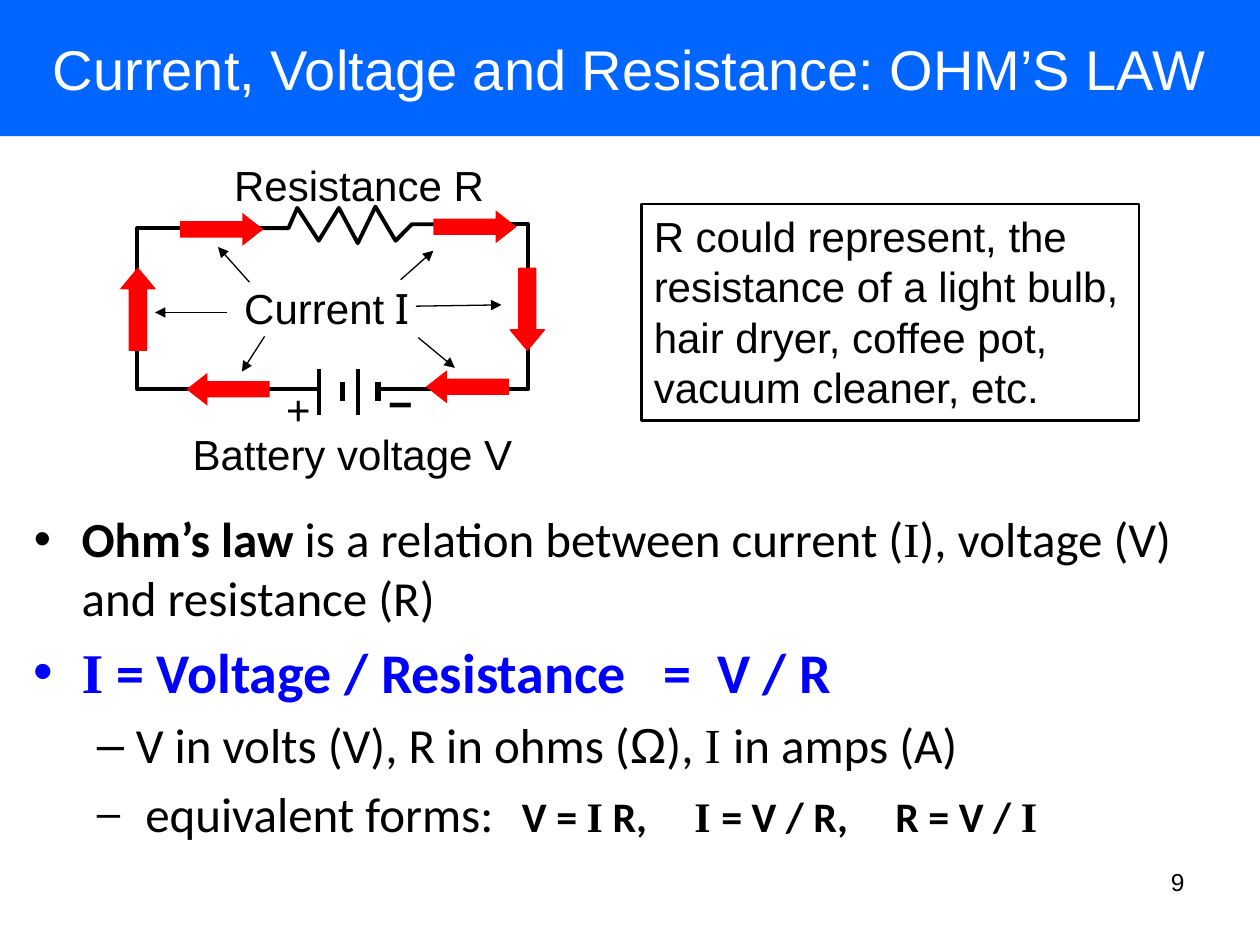
"""Build the Ohm's law slide with a circuit diagram and its formulas."""
from lxml.etree import SubElement
from pptx import Presentation
from pptx.dml.color import RGBColor
from pptx.enum.shapes import MSO_CONNECTOR, MSO_SHAPE
from pptx.enum.text import MSO_ANCHOR, PP_ALIGN
from pptx.oxml.ns import qn
from pptx.util import Inches, Pt

COLORS = {"banner": "0066FF", "white": "FFFFFF", "black": "000000",
          "formula": "0000FF", "current": "FF0000"}
SANS, BODY, SERIF, SLAB = "Arial", "Calibri", "Times New Roman", "Roboto Slab"

TITLE = "Current, Voltage and Resistance: OHM’S LAW"
EXAMPLES = ["R could represent, the resistance of a light bulb,",
            "hair dryer, coffee pot, vacuum cleaner, etc."]
BULLETS = [
    (0, "black", [("Ohm’s law", 28, BODY, True),
                  (" is a relation between current (", 28, BODY, False),
                  ("I", 28, SERIF, False),
                  ("), voltage (V) and resistance (R)", 28, BODY, False)]),
    (0, "formula", [("I", 32, SERIF, True),
                    (" = Voltage / Resistance   =  V / R", 32, BODY, True)]),
    (1, "black", [("V in volts (V), R in ohms (", 28, BODY, False),
                  ("Ω", 28, SANS, False), ("), ", 28, BODY, False),
                  ("I ", 28, SERIF, False), ("in amps (A)", 28, BODY, False)]),
    (1, "black", [(" ", 24, BODY, False), ("equivalent forms:", 28, BODY, False),
                  ("   ", 24, BODY, False), ("V = ", 24, BODY, True),
                  ("I", 24, SERIF, True), (" R,     ", 24, BODY, True),
                  ("I ", 24, SERIF, True), ("= V / R,     R = V / ", 24, BODY, True),
                  ("I", 24, SERIF, True)]),
]
BULLET_LEVELS = [("•", 0.38, -0.38), ("–", 0.81, -0.31)]

CIRCUIT_LABELS = [
    ((1.76, 1.22, 2.19, 0.5), [("Resistance R", 24, SANS, False)]),
    ((1.43, 3.35, 2.74, 0.5), [("Battery voltage V", 24, SANS, False)]),
    ((1.84, 2.19, 1.53, 0.5), [("Current", 24, SANS, False), (" I", 24, SLAB, False)]),
]
POLE_SIGNS = [((2.27, 3.04, 0.18, 0.4), [("+", 24, SANS, False)]),
              ((3.08, 3.0, 0.18, 0.4), [("−", 24, SANS, True)])]

RESISTOR = [(2.01, 1.81), (2.29, 1.81), (2.36, 1.65), (2.53, 1.91), (2.69, 1.65),
            (2.84, 1.93), (2.98, 1.64), (3.14, 1.91), (3.27, 1.78), (3.55, 1.78)]
LEFT_WIRE = [(2.06, 1.81), (1.09, 1.81), (1.09, 3.09), (2.54, 3.09)]
RIGHT_WIRE = [(3.49, 1.78), (4.19, 1.78), (4.19, 3.09), (3.0, 3.09)]
LONG_PLATE, SHORT_PLATE = (2.93, 3.29, 2.25), (3.03, 3.18, 3)
BATTERY = [(2.53, LONG_PLATE), (2.72, SHORT_PLATE), (2.84, LONG_PLATE), (3.0, SHORT_PLATE)]

UP, LEFT = MSO_SHAPE.UP_ARROW, MSO_SHAPE.LEFT_ARROW
ARROW_STYLES = {UP: (0.27, 0.65, 0.6), LEFT: (0.66, 0.26, 0.64)}
CURRENT_ARROWS = [(UP, 0.96, 2.13, 0), (UP, 4.05, 2.13, 180),
                  (LEFT, 1.48, 2.96, 0), (LEFT, 3.38, 2.94, 0),
                  (LEFT, 1.43, 1.69, 180), (LEFT, 3.44, 1.67, 180)]
POINTERS = [((1.98, 2.24), (1.73, 1.96)), ((3.18, 2.22), (3.44, 1.99)),
            ((1.8, 2.48), (1.23, 2.48)), ((3.3, 2.43), (3.98, 2.42)),
            ((2.1, 2.67), (1.92, 2.95)), ((3.32, 2.68), (3.61, 2.92))]


def color(name):
    return RGBColor.from_string(COLORS[name])


def fill_shape(shape, name):
    shape.fill.solid()
    shape.fill.fore_color.rgb = color(name)


def set_line(shape, name, width):
    shape.line.color.rgb = color(name)
    shape.line.width = Pt(width)


def add_runs(paragraph, runs, color_name="black"):
    for text, size, font, bold in runs:
        run = paragraph.add_run()
        run.text = text
        run.font.size, run.font.name, run.font.bold = Pt(size), font, bold
        run.font.color.rgb = color(color_name)


def add_text(shapes, box, runs, wrap=True, margin=None):
    shape = shapes.add_textbox(*map(Inches, box))
    frame = shape.text_frame
    frame.word_wrap = wrap
    if margin is not None:
        frame.margin_left = frame.margin_right = Inches(margin)
        frame.margin_top = frame.margin_bottom = Inches(margin)
    add_runs(frame.paragraphs[0], runs)
    return frame


def add_wire(shapes, points):
    start, *corners = [(Inches(x), Inches(y)) for x, y in points]
    builder = shapes.build_freeform(*start)
    builder.add_line_segments(corners, close=False)
    wire = builder.convert_to_shape()
    wire.shadow.inherit = False
    wire.fill.background()
    set_line(wire, "black", 2.25)


def add_line(shapes, start, end, width, arrow=False):
    line = shapes.add_connector(MSO_CONNECTOR.STRAIGHT, *map(Inches, start + end))
    set_line(line, "black", width)
    properties = line._element.spPr
    if arrow:
        SubElement(properties.find(qn("a:ln")), qn("a:tailEnd"), type="triangle")
    SubElement(properties, qn("a:effectLst"))


def add_current_arrow(shapes, kind, left, top, rotation):
    width, height, head = ARROW_STYLES[kind]
    arrow = shapes.add_shape(kind, *map(Inches, (left, top, width, height)))
    arrow.adjustments[0], arrow.adjustments[1] = 0.5, head
    arrow.rotation = rotation
    arrow.shadow.inherit = False
    fill_shape(arrow, "current")
    if kind == UP:
        set_line(arrow, "current", 0.75)
    else:
        arrow.line.fill.background()


def add_circuit(slide):
    shapes = slide.shapes.add_group_shape().shapes
    for points in (RESISTOR, LEFT_WIRE, RIGHT_WIRE):
        add_wire(shapes, points)
    for x, (top, bottom, width) in BATTERY:
        add_line(shapes, (x, top), (x, bottom), width)
    for box, runs in CIRCUIT_LABELS:
        add_text(shapes, box, runs, wrap=False)
    for arrow in CURRENT_ARROWS:
        add_current_arrow(shapes, *arrow)
    for start, end in POINTERS:
        add_line(shapes, start, end, 0.75, arrow=True)
    for box, runs in POLE_SIGNS:
        add_text(shapes, box, runs, margin=0)


def add_title(slide):
    title = slide.shapes.title
    title.left, title.top, title.width, title.height = map(Inches, (0, 0, 10, 1.08))
    fill_shape(title, "banner")
    title.text_frame.vertical_anchor = MSO_ANCHOR.MIDDLE
    paragraph = title.text_frame.paragraphs[0]
    paragraph.alignment = PP_ALIGN.CENTER
    add_runs(paragraph, [(TITLE, 32, SANS, False)], "white")


def add_examples(slide):
    box = slide.shapes.add_textbox(*map(Inches, (5.09, 1.62, 3.95, 1.72)))
    set_line(box, "black", 1.5)
    frame = box.text_frame
    frame.word_wrap = True
    for index, text in enumerate(EXAMPLES):
        paragraph = frame.add_paragraph() if index else frame.paragraphs[0]
        add_runs(paragraph, [(text, 24, SANS, False)])


def add_bullets(slide):
    box = slide.shapes.add_textbox(*map(Inches, (0.17, 3.99, 9.33, 3.36)))
    frame = box.text_frame
    frame.word_wrap = True
    for index, (level, color_name, runs) in enumerate(BULLETS):
        paragraph = frame.add_paragraph() if index else frame.paragraphs[0]
        paragraph.level = level
        character, margin, indent = BULLET_LEVELS[level]
        properties = paragraph._p.get_or_add_pPr()
        properties.set("marL", str(Inches(margin)))
        properties.set("indent", str(Inches(indent)))
        spacing = SubElement(properties, qn("a:spcBef"))
        SubElement(spacing, qn("a:spcPct"), val="20000")
        SubElement(properties, qn("a:buFont"), typeface=SANS)
        SubElement(properties, qn("a:buChar"), char=character)
        add_runs(paragraph, runs, color_name)


def main():
    presentation = Presentation()
    presentation.slide_width, presentation.slide_height = Inches(10), Inches(7.5)
    slide = presentation.slides.add_slide(presentation.slide_layouts[5])
    add_title(slide)
    add_bullets(slide)
    add_examples(slide)
    add_circuit(slide)
    number = add_text(slide.shapes, (7.17, 6.83, 2.33, 0.52), [("9", 14, SANS, False)])
    number.paragraphs[0].alignment = PP_ALIGN.RIGHT
    presentation.save("out.pptx")


if __name__ == "__main__":
    main()
